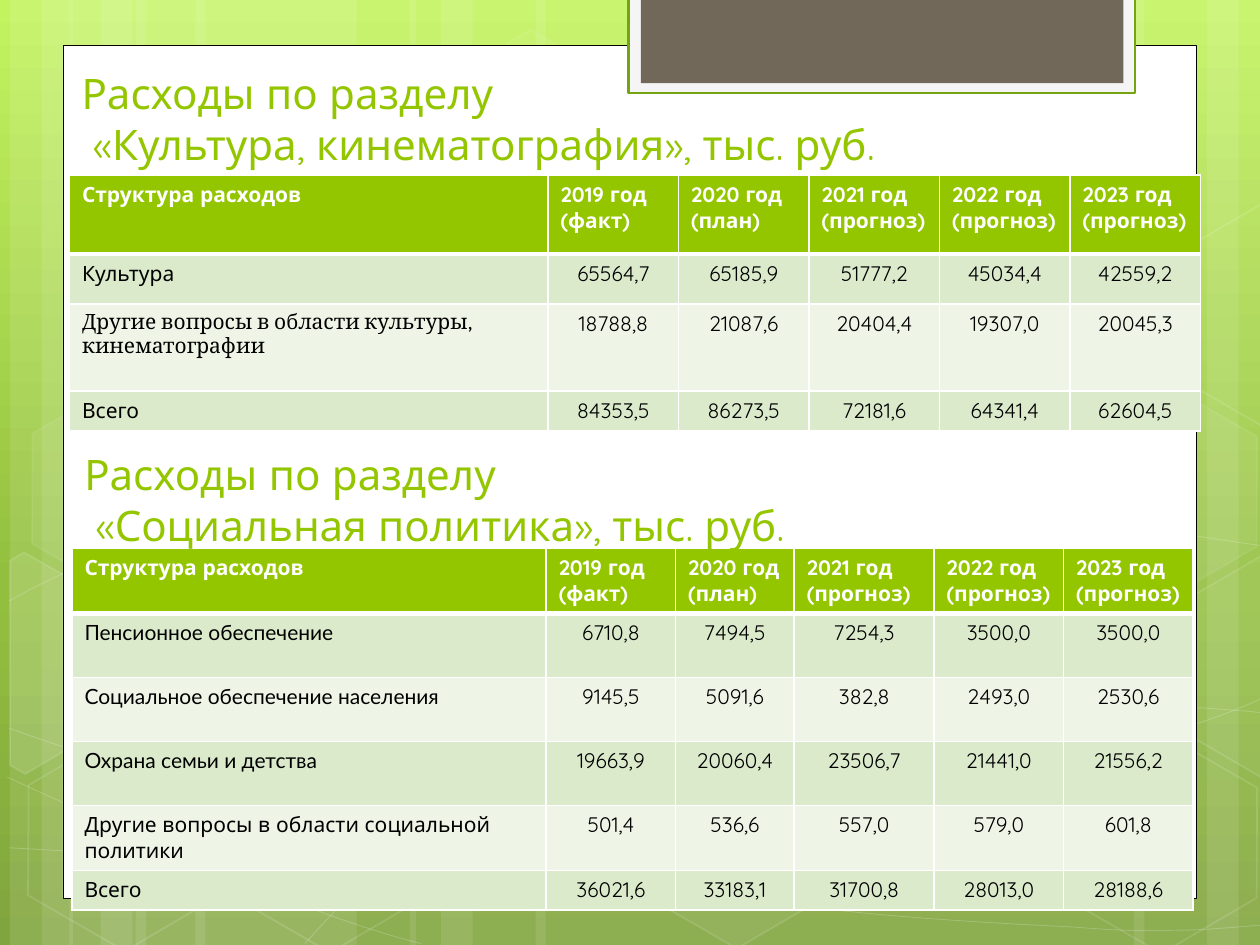
from copy import deepcopy
from math import cos, sin, radians

from lxml import etree
from pptx import Presentation
from pptx.dml.color import RGBColor
from pptx.enum.shapes import MSO_SHAPE
from pptx.enum.text import MSO_ANCHOR, MSO_AUTO_SIZE, PP_ALIGN
from pptx.oxml.ns import qn
from pptx.util import Cm, Pt

RECT, HEXAGON = MSO_SHAPE.RECTANGLE, MSO_SHAPE.HEXAGON
LEFT, CENTER = PP_ALIGN.LEFT, PP_ALIGN.CENTER

WHITE, BLACK = RGBColor(255, 255, 255), RGBColor(0, 0, 0)
GREEN, DARK_GREEN = RGBColor(0x94, 0xC6, 0x00), RGBColor(0x74, 0xA5, 0x10)
PALE, BROWN = RGBColor(0xF5, 0xF5, 0xF5), RGBColor(0x71, 0x68, 0x5A)
ROW_FILLS = RGBColor(0xDC, 0xEA, 0xCC), RGBColor(0xEE, 0xF5, 0xE7)
BACKGROUND = [(0, RGBColor(0xC3, 0xF3, 0x5F)), (0.62, RGBColor(0x93, 0xBF, 0x3F)),
              (1, RGBColor(0x81, 0xA5, 0x3E))]
FONT, SERIF, SANS = "Quicksand", "Cambria", "Lato"

# All lengths below are in centimetres.
SLIDE_W, SLIDE_H = 25.4, 19.05
HEADER = [["Структура расходов"], ["2019 год", "(факт)"], ["2020 год", "(план)"],
          ["2021 год", "(прогноз)"], ["2022 год", "(прогноз)"], ["2023 год", "(прогноз)"]]
CULTURE_TITLE = ["Расходы по разделу", " «Культура, кинематография», тыс. руб."]
SOCIAL_TITLE = ["Расходы по разделу", " «Социальная политика», тыс. руб."]
CULTURE = {
    "at": (1.4, 3.53), "cols": [9.65] + [2.63] * 5, "heights": [1.59, 1.01, 1.75, 0.81],
    "rows": [
        (FONT, "Культура", "65564,7 65185,9 51777,2 45034,4 42559,2"),
        (SERIF, "Другие вопросы в области культуры, кинематографии",
         "18788,8 21087,6 20404,4 19307,0 20045,3"),
        (FONT, "Всего", "84353,5 86273,5 72181,6 64341,4 62604,5")]}
SOCIAL = {
    "at": (1.45, 11.05), "cols": [9.56, 2.61, 2.39, 2.82, 2.61, 2.61],
    "heights": [1.28] + [1.29] * 4 + [0.8],
    "rows": [
        (SANS, "Пенсионное обеспечение", "6710,8 7494,5 7254,3 3500,0 3500,0"),
        (SANS, "Социальное обеспечение населения", "9145,5 5091,6 382,8 2493,0 2530,6"),
        (SANS, "Охрана семьи и детства", "19663,9 20060,4 23506,7 21441,0 21556,2"),
        (FONT, "Другие вопросы в области социальной политики", "501,4 536,6 557,0 579,0 601,8"),
        (FONT, "Всего", "36021,6 33183,1 31700,8 28013,0 28188,6")]}

# Vertical bands: left, width, rotation
BANDS = [(2.74, 4.45, 0), (0.2, 1.27, 0), (0.84, 2.11, 0),
         (3.94, 4.45, 0), (1.4, 1.27, 0), (2.03, 2.11, 0),
         (18.62, 4.45, 180), (24.33, 1.27, 180), (22.86, 2.11, 180),
         (10.8, 7.82, 0), (8.26, 1.27, 0), (8.89, 2.11, 0)]
# Chains of cubic curves: a start, then two controls and an end for each
CURVES = [
    [(0.18, 17.09), (1.55, 17.17), (2.92, 17.25), (4.83, 17.22), (6.73, 17.2), (9.09, 17.15),
     (11.63, 16.89), (14.17, 16.64), (17.78, 16.15), (20.12, 15.67), (22.43, 15.19),
     (24.82, 14.43), (25.58, 14)],
    [(0.18, 12.12), (0.91, 11.71), (1.65, 11.33), (3.07, 10.95), (4.52, 10.57), (6.58, 10.01),
     (8.81, 9.83), (11.07, 9.65), (13.82, 9.63), (16.61, 9.83), (19.41, 10.03),
     (24.05, 10.82), (25.58, 11.02)],
    [(0.15, 15.67), (3.23, 17.07), (6.27, 18.47), (8.48, 19.02)],
    [(0.18, 14.68), (0.97, 14.96), (1.78, 15.24), (3.25, 15.65), (4.72, 16.03), (6.93, 16.66),
     (9.07, 17.09), (11.18, 17.53), (13.84, 17.98), (15.95, 18.24), (18.06, 18.52),
     (20.32, 18.62), (21.67, 18.69), (22.99, 18.8), (23.34, 18.75), (24, 18.75),
     (24.66, 18.72), (25.12, 18.67), (25.58, 18.64)],
    [(6.15, 19.02), (6.6, 18.52), (7.06, 18.01), (7.67, 17.55), (8.28, 17.09), (9.14, 16.59),
     (9.86, 16.23), (10.57, 15.88), (11, 15.72), (11.94, 15.47), (12.85, 15.21),
     (14.55, 14.86), (15.44, 14.68), (16.36, 14.5), (16.48, 14.5), (17.27, 14.45),
     (18.06, 14.38), (19.3, 14.3), (20.17, 14.27), (21.06, 14.25), (22.5, 14.27),
     (22.5, 14.27), (23.1, 14.27), (23.6, 14.27), (24.21, 14.27), (24.66, 14.3),
     (25.1, 14.33), (25.55, 14.38)]]
# Hexagons: left, top, fill opacity, line opacity
HEXAGONS = [(8.48, 0.91, 4, 8), (12.62, 14.96, 6, 12), (0.28, 15.01, None, 12),
            (0.36, 7.92, 7, 8), (4.42, 15.04, None, 12), (19.13, 11.51, 10, 12),
            (21.18, 15.06, None, 12), (21.18, 7.98, 7, 8)]
LEFT_CUT = [(0.2, 11.3), (0.48, 11.13), (2.44, 12.24), (2.41, 14.48), (0.51, 15.6), (0.2, 15.42)]
RIGHT_CUT = [(23.52, 12.32), (25.43, 11.2), (25.63, 11.33), (25.63, 15.57), (25.45, 15.67),
             (23.52, 14.55)]
# Hexagons cut by the slide edge: centre, outline, fill opacity
CUT_HEXAGONS = [((0.91, 13.59), LEFT_CUT, 10), ((25.02, 13.21), RIGHT_CUT, 4),
                ((25.02, 6.12), [(x, y - 7.09) for x, y in RIGHT_CUT], None)]
# Panels: box, fill, line colour, line width
PANELS = [((1.27, 0.91, 22.86, 17.2), WHITE, BLACK, 0.5),
          ((12.67, -0.05, 10.21, 1.93), PALE, DARK_GREEN, 1.25),
          ((12.92, -0.05, 9.73, 1.73), BROWN, None, 0)]


def set_opacity(parent, percent):
    color = parent.find(qn("a:solidFill")).find(qn("a:srgbClr"))
    etree.SubElement(color, qn("a:alpha"), val=str(percent * 1000))


def style(sp, fill=None, line=None, width=1, fill_opacity=100, line_opacity=100):
    sp.shadow.inherit = False
    sp_pr = sp._element.spPr
    if fill is None:
        sp.fill.background()
    else:
        sp.fill.solid()
        sp.fill.fore_color.rgb = fill
        if fill_opacity < 100:
            set_opacity(sp_pr, fill_opacity)
    if line is None:
        sp.line.fill.background()
    else:
        sp.line.color.rgb = line
        sp.line.width = Pt(width)
        if line_opacity < 100:
            set_opacity(sp_pr.find(qn("a:ln")), line_opacity)


def style_hexagon(sp, fill_opacity, line_opacity):
    sp.rotation = 30
    style(sp, WHITE if fill_opacity else None, WHITE, 1, fill_opacity or 100, line_opacity)


def add_outline(shapes, points, close):
    points = [(Cm(x), Cm(y)) for x, y in points]
    builder = shapes.build_freeform(*points[0])
    builder.add_line_segments(points[1:], close=close)
    return builder.convert_to_shape()


def add_curve(shapes, chain):
    """Join the curve ends with lines, then bend each line by its two controls."""
    sp = add_outline(shapes, chain[::3], False)
    for i, segment in enumerate(list(sp._element.iter(qn("a:lnTo")))):
        segment.tag = qn("a:cubicBezTo")
        for k, (x, y) in enumerate(chain[3 * i + 1:3 * i + 3]):
            pt = etree.Element(qn("a:pt"), x=str(Cm(x) - sp.left), y=str(Cm(y) - sp.top))
            segment.insert(k, pt)
    return sp


def turn(points, centre, degrees):
    c, s = cos(radians(degrees)), sin(radians(degrees))
    cx, cy = centre
    return [(cx + (x - cx) * c - (y - cy) * s, cy + (x - cx) * s + (y - cy) * c)
            for x, y in points]


def add_run(p, text, size=12, font=FONT, color=BLACK, bold=False):
    r = p.add_run()
    r.text = text
    r.font.size, r.font.name, r.font.bold = Pt(size), font, bold
    r.font.color.rgb = color


def write(tf, lines, align=LEFT, **text_format):
    for i, line in enumerate(lines):
        p = tf.paragraphs[0] if i == 0 else tf.add_paragraph()
        p.alignment = align
        add_run(p, line, **text_format)


def format_cell(cell, fill, top, bottom):
    tc_pr = cell._tc.get_or_add_tcPr()
    for side, width in zip("LRTB", (1, 1, top, bottom)):
        ln = etree.SubElement(tc_pr, qn("a:ln" + side), w=str(Pt(width)))
        solid = etree.SubElement(ln, qn("a:solidFill"))
        etree.SubElement(solid, qn("a:srgbClr"), val=str(WHITE))
    cell.fill.solid()
    cell.fill.fore_color.rgb = fill


def add_expenses(shapes, at, cols, heights, rows):
    box = (*at, sum(cols), sum(heights))
    table = shapes.add_table(len(heights), len(cols), *map(Cm, box)).table
    for column, width in zip(table.columns, cols):
        column.width = Cm(width)
    for row, height in zip(table.rows, heights):
        row.height = Cm(height)
    for j, lines in enumerate(HEADER):
        cell = table.cell(0, j)
        format_cell(cell, GREEN, 1, 3)
        write(cell.text_frame, lines, color=WHITE, bold=True)
    for i, (font, label, values) in enumerate(rows, 1):
        for j, text in enumerate([label] + values.split()):
            cell = table.cell(i, j)
            format_cell(cell, ROW_FILLS[(i - 1) % 2], 3 if i == 1 else 1, 1)
            write(cell.text_frame, [text], font=FONT if j else font,
                  align=CENTER if j else LEFT)


def set_background(slide):
    fill = slide.background.fill
    fill.gradient()
    fill.gradient_angle = 270
    stop_list = next(slide._element.iter(qn("a:gsLst")))
    stop_list.append(deepcopy(stop_list[-1]))
    for stop, (position, color) in zip(fill.gradient_stops, BACKGROUND):
        stop.position = position
        stop.color.rgb = color


def main():
    prs = Presentation()
    prs.slide_width, prs.slide_height = Cm(SLIDE_W), Cm(SLIDE_H)
    slide = prs.slides.add_slide(prs.slide_layouts[5])
    shapes = slide.shapes
    set_background(slide)

    for left, width, rotation in BANDS:
        sp = shapes.add_shape(RECT, Cm(left), 0, Cm(width), Cm(SLIDE_H))
        sp.rotation = rotation
        style(sp, WHITE, fill_opacity=10)
    for chain in CURVES:
        style(add_curve(shapes, chain), None, WHITE, 0.5, line_opacity=20)
    for left, top, fill_opacity, line_opacity in HEXAGONS:
        sp = shapes.add_shape(HEXAGON, Cm(left), Cm(top), Cm(4.45), Cm(3.86))
        sp.adjustments[0] = 0.285
        style_hexagon(sp, fill_opacity, line_opacity)
    for centre, points, fill_opacity in CUT_HEXAGONS:
        style_hexagon(add_outline(shapes, turn(points, centre, -30), True), fill_opacity, 12)
    for box, fill, line, width in PANELS:
        style(shapes.add_shape(RECT, *map(Cm, box)), fill, line, width)

    title = shapes.title
    title._element.getparent().append(title._element)  # in front of the panels
    title.left, title.top, title.width, title.height = map(Cm, (1.39, 1.32, 22.81, 2.21))
    tf = title.text_frame
    tf.auto_size, tf.vertical_anchor = MSO_AUTO_SIZE.NONE, MSO_ANCHOR.BOTTOM
    p = tf.paragraphs[0]
    p.alignment = LEFT
    for i, line in enumerate(CULTURE_TITLE):
        if i:
            p.add_line_break()
        add_run(p, line, size=24, color=GREEN)

    add_expenses(shapes, **CULTURE)
    add_expenses(shapes, **SOCIAL)
    tf = shapes.add_textbox(*map(Cm, (1.45, 8.92, 22.61, 2.31))).text_frame
    tf.word_wrap = True
    write(tf, SOCIAL_TITLE, size=24, color=GREEN)
    prs.save("out.pptx")


if __name__ == "__main__":
    main()
